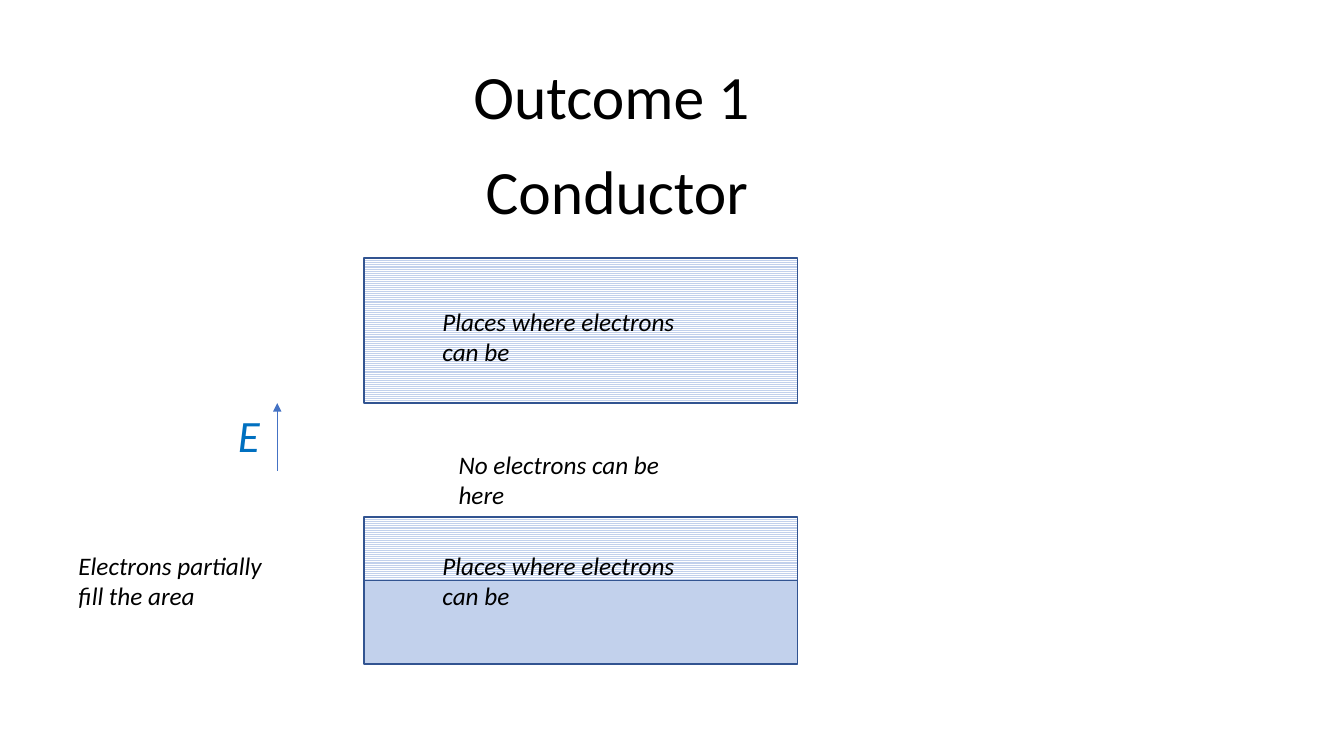
"""Draw the energy bands of a conductor on one slide."""
from dataclasses import dataclass

from lxml import etree
from pptx import Presentation
from pptx.dml.color import RGBColor
from pptx.enum.dml import MSO_PATTERN
from pptx.enum.shapes import MSO_CONNECTOR, MSO_SHAPE
from pptx.enum.text import MSO_ANCHOR, MSO_AUTO_SIZE, PP_ALIGN
from pptx.oxml.ns import qn
from pptx.util import Inches, Pt

RECT = MSO_SHAPE.RECTANGLE
LINE = MSO_CONNECTOR.STRAIGHT
HATCH = MSO_PATTERN.NARROW_HORIZONTAL
TOP, MID = MSO_ANCHOR.TOP, MSO_ANCHOR.MIDDLE
LEFT, MIDST = PP_ALIGN.LEFT, PP_ALIGN.CENTER
GROW, FIXED = MSO_AUTO_SIZE.SHAPE_TO_FIT_TEXT, MSO_AUTO_SIZE.NONE

WIDE, HIGH = Inches(13.33), Inches(7.5)
COLS, ROWS = 133.3, 75
BLACK, WHITE, PALE, EDGE = "000000", "FFFFFF", "C2D1EC", "325491"
BLUE, ARROW = "0070C0", "4472C4"

NOTE = {
    "frame": {"word_wrap": True, "auto_size": GROW, "vertical_anchor": TOP},
    "para": {"alignment": LEFT},
    "font": {"name": "Calibri", "size": Pt(18), "italic": True},
}
HEAD = {
    "frame": {"word_wrap": True, "auto_size": FIXED, "vertical_anchor": MID},
    "para": {"alignment": MIDST, "line_spacing": 0.9},
    "font": {"name": "Calibri", "size": Pt(44), "italic": False},
}
SIGN = {**NOTE, "font": {**NOTE["font"], "size": Pt(32)}}


@dataclass
class Band:
    row: float
    tall: float
    hatch: bool = True
    col: float = 36.1
    span: float = 43


@dataclass
class Label:
    text: str
    col: float
    row: float
    span: float = 26.3
    tall: float = 7.1
    style: dict = None
    hue: str = BLACK


PLACES = "Places where electrons can be"
ITEMS = [
    Band(51.3, 14.4),
    Band(25.6, 14.4),
    Label(PLACES, 42.9, 29.9),
    Band(57.6, 8.3, hatch=False),
    Label(PLACES, 42.9, 54.1),
    Label("Electrons partially fill the area", 6.8, 54.1, 21.6),
    Label("Outcome 1", 3.7, 5, 113.9, 9.7, HEAD),
    Label("No electrons can be here", 44.5, 44.1),
    Label("Conductor", 3.7, 15, 115, 8.7, HEAD),
]
FIELD = Label("E", 22.6, 40, 5.9, 6.4, SIGN, BLUE)


def paint(hue: str) -> RGBColor:
    return RGBColor.from_string(hue)


def across(cols: float) -> int:
    return round(WIDE * cols / COLS)


def down(rows: float) -> int:
    return round(HIGH * rows / ROWS)


def place(item: Band | Label) -> tuple:
    return across(item.col), down(item.row), across(item.span), down(item.tall)


def apply(target: object, values: dict) -> None:
    for key, value in values.items():
        setattr(target, key, value)


def draw_band(shapes: object, band: Band) -> None:
    box = shapes.add_shape(RECT, *place(band))
    box.shadow.inherit = False
    if band.hatch:
        box.fill.patterned()
        box.fill.pattern = HATCH
        box.fill.back_color.rgb = paint(WHITE)
    else:
        box.fill.solid()
    box.fill.fore_color.rgb = paint(PALE)
    box.line.color.rgb = paint(EDGE)
    box.line.width = Pt(1)


def draw_label(shapes: object, label: Label) -> None:
    style = label.style or NOTE
    frame = shapes.add_textbox(*place(label)).text_frame
    para = frame.paragraphs[0]
    run = para.add_run()
    run.text = label.text
    apply(frame, style["frame"])
    apply(para, style["para"])
    apply(run.font, style["font"])
    run.font.color.rgb = paint(label.hue)


def draw_arrow(shapes: object, col: float, start: float, end: float) -> None:
    arrow = shapes.add_connector(LINE, across(col), down(start), across(col), down(end))
    arrow.line.color.rgb = paint(ARROW)
    arrow.line.width = Pt(1)
    etree.SubElement(arrow.line._get_or_add_ln(), qn("a:tailEnd"), type="triangle")
    etree.SubElement(arrow._element.spPr, qn("a:effectLst"))


def main() -> None:
    deck = Presentation()
    apply(deck, {"slide_width": WIDE, "slide_height": HIGH})
    shapes = deck.slides.add_slide(deck.slide_layouts[6]).shapes
    for item in ITEMS:
        draw = draw_band if isinstance(item, Band) else draw_label
        draw(shapes, item)
    group = shapes.add_group_shape().shapes
    draw_label(group, FIELD)
    draw_arrow(group, 27.5, 46.7, 40)
    deck.save("out.pptx")


if __name__ == "__main__":
    main()
